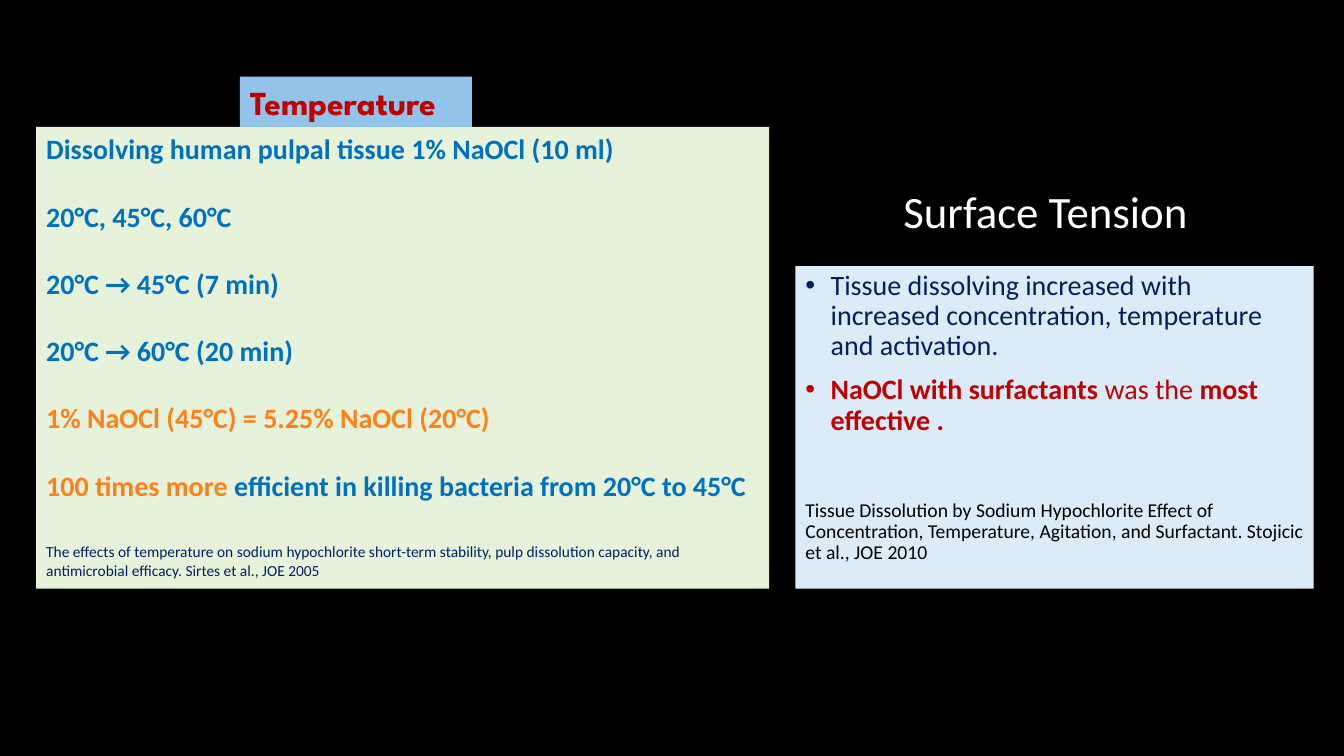
from pptx import Presentation
from pptx.dml.color import RGBColor
from pptx.enum import shapes, text
from pptx.oxml import parse_xml
from pptx.oxml.ns import nsdecls
from pptx.util import Inches, Pt

BLACK = RGBColor(0x00, 0x00, 0x00)
WHITE = RGBColor(0xFF, 0xFF, 0xFF)
BLUE = RGBColor(0x00, 0x70, 0xC0)
NAVY = RGBColor(0x00, 0x20, 0x60)
ORANGE = RGBColor(0xFE, 0x80, 0x1A)
RED = RGBColor(0xC0, 0x00, 0x00)
GREEN_FILL = RGBColor(0xE6, 0xF2, 0xD9)
TAB_FILL = RGBColor(0x92, 0xC3, 0xEA)
BLUE_FILL = RGBColor(0xDB, 0xEB, 0xF8)

TITLE = "Surface Tension"
HEADING = [(0, 24, False, [("Temperature", RED, True)])]
FINDINGS = [
    [("Dissolving human pulpal tissue 1% NaOCl (10 ml)", BLUE, True)],
    [("20°C, 45°C, 60°C", BLUE, True)],
    [("20°C → 45°C (7 min)", BLUE, True)],
    [("20°C → 60°C (20 min)", BLUE, True)],
    [("1% NaOCl (45°C) = 5.25% NaOCl (20°C)", ORANGE, True)],
    [("100 times more ", ORANGE, True),
     ("efficient in killing bacteria from 20°C to 45°C", BLUE, True)],
]
TEMPERATURE_SOURCE = (
    "The effects of temperature on sodium hypochlorite short-term stability, "
    "pulp dissolution capacity, and antimicrobial efficacy. Sirtes et al., JOE 2005")
TENSION = [
    (0, 20, True, [("Tissue dissolving increased with increased concentration, "
                    "temperature and activation.", NAVY, False)]),
    (10, 20, True, [("NaOCl with surfactants ", RED, True), ("was the ", RED, False),
                    ("most effective .", RED, True)]),
    (46, 14, False, [("Tissue Dissolution by Sodium Hypochlorite Effect of Concentration, "
                      "Temperature, Agitation, and Surfactant. Stojicic et al., JOE 2010",
                      BLACK, False)]),
]
TEMPERATURE = [(24 if i else 0, 20, False, runs) for i, runs in enumerate(FINDINGS)]
TEMPERATURE.append((29, 11, False, [(TEMPERATURE_SOURCE, NAVY, False)]))

PANELS = [
    ((0.36, 1.26, 7.27, 4.58), GREEN_FILL, "Calibri", 1, TEMPERATURE),
    ((2.38, 0.76, 2.3, 0.5), TAB_FILL, "League Spartan", 1, HEADING),
    ((7.89, 2.64, 5.14, 3.2), BLUE_FILL, "Calibri", 0.9, TENSION),
]


def add_bullet(p):
    pPr = p._p.get_or_add_pPr()
    pPr.set("marL", str(Inches(0.25)))
    pPr.set("indent", str(-Inches(0.25)))
    pPr.append(parse_xml(f'<a:buFont {nsdecls("a")} typeface="Arial"/>'))
    pPr.append(parse_xml(f'<a:buChar {nsdecls("a")} char="•"/>'))


def style_font(font, name, size, color, bold):
    font.name, font.size, font.bold = name, Pt(size), bold
    font.color.rgb = color


def add_panel(s, box, fill, font_name, spacing, paragraphs):
    sp = s.shapes.add_shape(shapes.MSO_SHAPE.RECTANGLE, *map(Inches, box))
    sp.shadow.inherit = False
    sp.fill.solid()
    sp.fill.fore_color.rgb = fill
    sp.line.fill.background()
    tf = sp.text_frame
    tf.word_wrap = True
    tf.vertical_anchor = text.MSO_ANCHOR.TOP
    for i, (before, size, bullet, runs) in enumerate(paragraphs):
        p = tf.add_paragraph() if i else tf.paragraphs[0]
        p.alignment = text.PP_ALIGN.LEFT
        p.line_spacing = spacing
        p.space_before = Pt(before)
        if bullet:
            add_bullet(p)
        for content, color, bold in runs:
            r = p.add_run()
            r.text = content
            style_font(r.font, font_name, size, color, bold)


def main():
    prs = Presentation()
    prs.slide_width, prs.slide_height = Inches(13.33), Inches(7.5)
    s = prs.slides.add_slide(prs.slide_layouts[5])
    s.background.fill.solid()
    s.background.fill.fore_color.rgb = BLACK

    title = s.shapes.title
    title.left, title.top, title.width, title.height = map(Inches, (8.74, 1.84, 3.14, 0.57))
    tf = title.text_frame
    tf.text = TITLE
    tf.word_wrap = True
    tf.auto_size = text.MSO_AUTO_SIZE.NONE
    tf.vertical_anchor = text.MSO_ANCHOR.MIDDLE
    p = tf.paragraphs[0]
    p.alignment = text.PP_ALIGN.RIGHT
    p.line_spacing = 0.9
    style_font(p.runs[0].font, "Calibri", 32, WHITE, False)

    for panel in PANELS:
        add_panel(s, *panel)
    prs.save("out.pptx")


if __name__ == "__main__":
    main()
